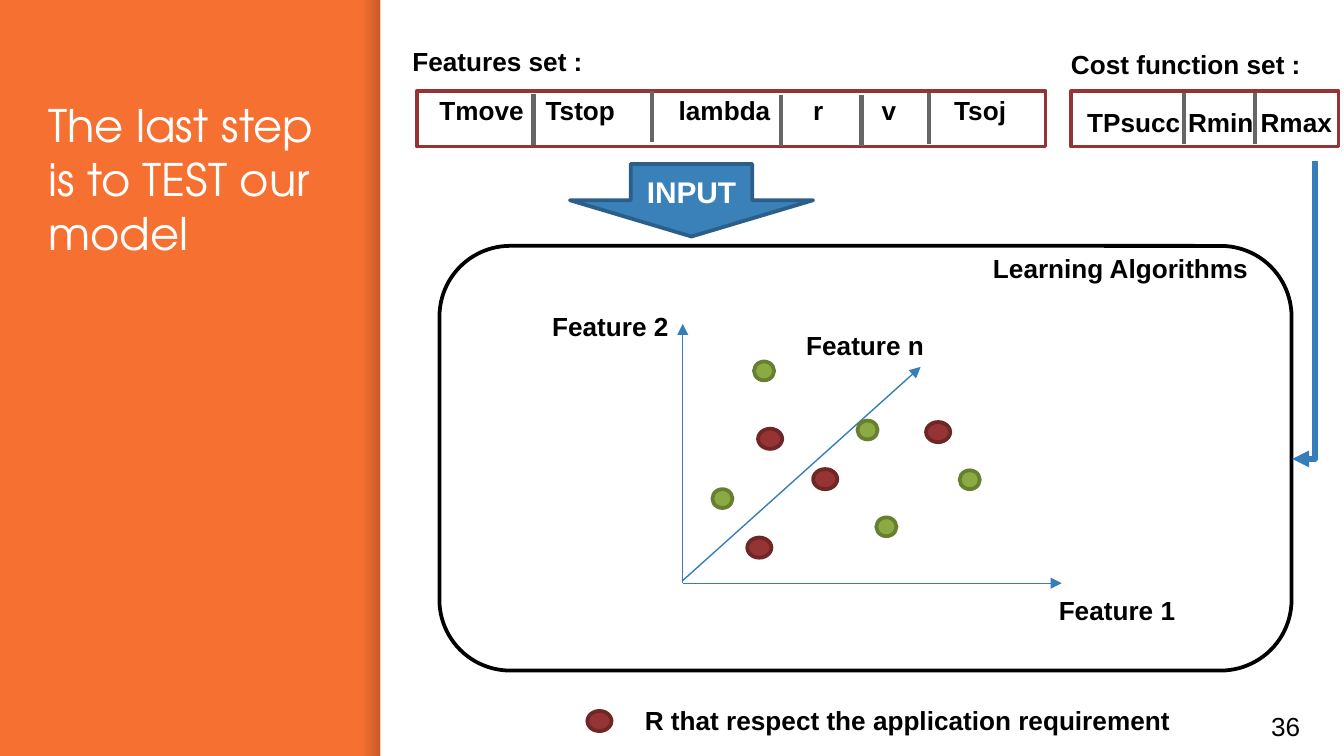
"""Build the slide on testing the model with features and cost functions."""
from lxml import etree
from pptx import Presentation
from pptx import util as u
from pptx.dml.color import RGBColor
from pptx.enum import shapes, text
from pptx.oxml.ns import qn

Inches = u.Inches
BLUE, RED, DARK_RED, GREEN, DARK_GREEN = "367EB9", "963334", "6F2626", "8BAB42", "677F31"


def paint(part, fill=None, line=None, width=2, arrow=False):
    """Give a shape or connector its fill, line and arrowhead, without shadow."""
    if hasattr(part, "fill"):
        part.shadow.inherit = False
        if fill:
            part.fill.solid()
            part.fill.fore_color.rgb = RGBColor.from_string(fill)
        else:
            part.fill.background()
    if line:
        part.line.color.rgb = RGBColor.from_string(line)
        part.line.width = u.Pt(width)
    else:
        part.line.fill.background()
    properties = part._element.spPr
    if arrow:
        etree.SubElement(properties.find(qn("a:ln")), qn("a:tailEnd"), type="triangle")
    if properties.find(qn("a:effectLst")) is None:
        etree.SubElement(properties, qn("a:effectLst"))
    return part


def write(part, words, size=14, color="000000", bold=True, font="Arial", wrap=True, inset=0.1):
    """Write one run of text into a shape and return its paragraph."""
    frame = part.text_frame
    frame.word_wrap = wrap
    frame.margin_left = Inches(inset)
    frame.margin_right = Inches(0.1)
    paragraph = frame.paragraphs[0]
    run = paragraph.add_run()
    run.text = words
    run.font.name, run.font.size, run.font.bold = font, u.Pt(size), bold
    run.font.color.rgb = RGBColor.from_string(color)
    return paragraph


deck = Presentation()
deck.slide_width = Inches(10)
deck.slide_height = deck.slide_width * 9 // 16
slide = deck.slides.add_slide(deck.slide_layouts[5])
parts = slide.shapes
slide.background.fill.solid()
slide.background.fill.fore_color.rgb = RGBColor.from_string("F67031")

edge_shade = paint(parts.add_shape(shapes.MSO_SHAPE.RECTANGLE, Inches(2.7), 0, Inches(0.12), deck.slide_height))
edge_shade.fill.gradient()
edge_shade.fill.gradient_angle = 0
for stop, alpha in zip(edge_shade.fill.gradient_stops, (0, 20000)):
    stop.color.rgb = RGBColor.from_string("000014")
    etree.SubElement(stop._gs[0], qn("a:alpha"), val=str(alpha))
paint(parts.add_shape(shapes.MSO_SHAPE.RECTANGLE, Inches(2.83), 0, Inches(7.17), deck.slide_height), "FFFFFF")

title = parts.title
title.left, title.top, title.width, title.height = map(Inches, (0.26, 0.63, 2.24, 4.35))
write(title, "The last step is to TEST our model", 24, "FFFFFF", False, "TeX Gyre Adventor")
title.text_frame.paragraphs[0].alignment = text.PP_ALIGN.LEFT
title.text_frame.vertical_anchor = text.MSO_ANCHOR.TOP
title.text_frame.margin_top = Inches(0.1)
title.text_frame.auto_size = text.MSO_AUTO_SIZE.NONE

page_number = parts.add_textbox(Inches(9.36), Inches(5.19), Inches(0.6), Inches(0.43))
write(page_number, "36", bold=False)
page_number.text_frame.vertical_anchor = text.MSO_ANCHOR.MIDDLE

algorithms = parts.add_shape(
    shapes.MSO_SHAPE.ROUNDED_RECTANGLE, Inches(3.27), Inches(1.83), Inches(6.34), Inches(3.16))
paint(algorithms, "FFFFFF", "000000")

sets = [
    (3.1, 4.68, [(3.97, 0.7), (4.85, 0.68), (5.81, 0.71), (6.41, 0.71), (6.91, 0.69)],
     2.95, 0.65, 0.57, 0.32, "Tmove\tTstop\tlambda\tr\tv\tTsoj", (0.79, 1.78, 2.78, 3.29, 3.83)),
    (7.97, 1.99, [(8.81, 0.69), (9.34, 0.69)],
     7.78, 0.74, 0.34, 0.31, "TPsucc\tRmin\tRmax", (0.75, 1.29)),
]
for left, width, dividers, names_left, names_top, names_height, inset, names, stops in sets:
    paint(parts.add_shape(shapes.MSO_SHAPE.RECTANGLE, Inches(left), Inches(0.68), Inches(width), Inches(0.41)),
          line=RED)
    for x, top in dividers:
        divider = parts.add_connector(
            shapes.MSO_CONNECTOR.STRAIGHT, Inches(x), Inches(top), Inches(x), Inches(top + 0.38))
        paint(divider, line="666666", width=2.25)
    names_box = parts.add_textbox(Inches(names_left), Inches(names_top), Inches(4.8), Inches(names_height))
    paragraph = write(names_box, names, inset=inset)
    tabs = etree.SubElement(paragraph._p.get_or_add_pPr(), qn("a:tabLst"))
    for position in stops:
        etree.SubElement(tabs, qn("a:tab"), pos=str(Inches(position)), algn="l")

labels = [
    ("Features set :", 2.97, 0.29, 1.47),
    ("Cost function set :", 7.87, 0.31, 1.92),
    ("Learning Algorithms", 7.29, 1.83, 2.17),
    ("Feature 1", 7.78, 4.37, 1.07),
    ("Feature 2", 4.01, 2.26, 1.07),
    ("Feature n", 5.9, 2.4, 1.08),
    ("R that respect the application requirement", 4.7, 5.19, 4.13),
]
for words, left, top, width in labels:
    write(parts.add_textbox(Inches(left), Inches(top), Inches(width), Inches(0.34)), words, wrap=False)

for start_y, end_x, end_y in [(4.34, 7.9, 4.34), (4.34, 5.08, 2.41), (4.32, 6.85, 2.73)]:
    axis = parts.add_connector(
        shapes.MSO_CONNECTOR.STRAIGHT, Inches(5.08), Inches(start_y), Inches(end_x), Inches(end_y))
    paint(axis, line=BLUE, width=0.75, arrow=True)

input_arrow = parts.add_shape(
    shapes.MSO_SHAPE.DOWN_ARROW, Inches(4.24), Inches(1.22), Inches(1.81), Inches(0.54))
paint(input_arrow, "3A81BA", "2B5F8A")
write(input_arrow, "INPUT", 16, "FFFFFF").alignment = text.PP_ALIGN.CENTER
input_arrow.text_frame.vertical_anchor = text.MSO_ANCHOR.MIDDLE

cost_arrow = parts.add_connector(
    shapes.MSO_CONNECTOR.ELBOW, Inches(8.59), Inches(2.22), Inches(10.81), Inches(2.39))
cost_arrow._element.spPr.find(qn("a:prstGeom")).set("prst", "bentConnector2")
cost_arrow._element.spPr.find(qn("a:xfrm")).set("rot", "5400000")
paint(cost_arrow, line=BLUE, width=3, arrow=True)

samples = [
    (GREEN, DARK_GREEN, 0.15, 0.14, [(5.61, 2.69), (6.38, 3.13), (6.52, 3.85), (7.14, 3.5), (5.3, 3.64)]),
    (RED, DARK_RED, 0.18, 0.15, [(6.05, 3.49), (6.89, 3.14), (5.64, 3.19), (5.56, 4), (4.37, 5.29)]),
]
for fill, outline, width, height, places in samples:
    for left, top in places:
        dot = parts.add_shape(shapes.MSO_SHAPE.OVAL, Inches(left), Inches(top), Inches(width), Inches(height))
        paint(dot, fill, outline)

deck.save("out.pptx")
